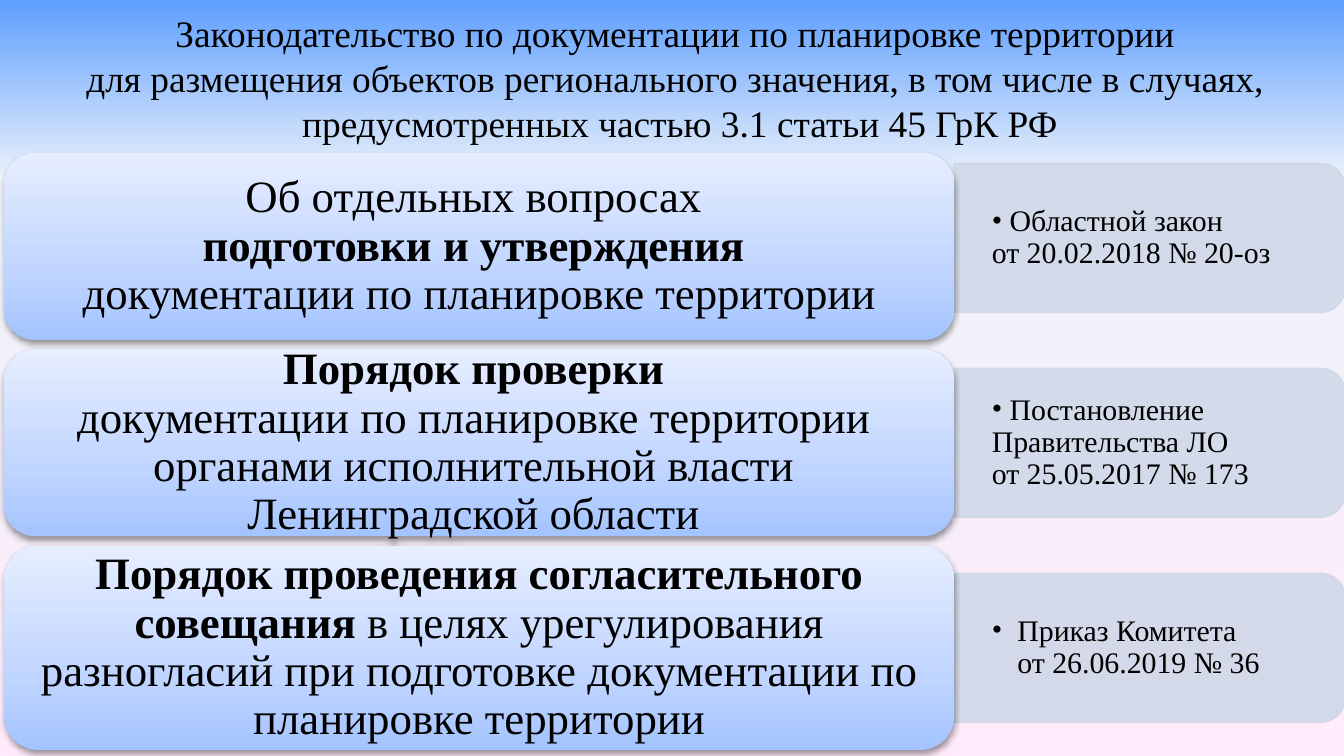
"""Build the slide on regional territory planning legislation."""
from lxml import etree
from pptx import Presentation
from pptx.dml.color import RGBColor
from pptx.enum.shapes import MSO_SHAPE as Shape
from pptx.enum.text import MSO_ANCHOR as Anchor, MSO_AUTO_SIZE as AutoSize, PP_ALIGN as Align
from pptx.oxml.ns import qn
from pptx.util import Inches, Pt

BLACK = RGBColor(0x00, 0x00, 0x00)
TAB = RGBColor(0xD0, 0xD8, 0xE8)
SKY = RGBColor(0x5E, 0x9E, 0xFF)
MIST = RGBColor(0xED, 0xF3, 0xF9)
PINK = RGBColor(0xFF, 0xEB, 0xFA)
CARD_LOW = RGBColor(0xA4, 0xC4, 0xFF)
CARD_MID = RGBColor(0xBF, 0xD4, 0xFF)
CARD_HIGH = RGBColor(0xE6, 0xEE, 0xFF)
FONT = "Times New Roman"

TITLE = (
    "Законодательство по документации по планировке территории \n"
    "для размещения объектов регионального значения, в том числе в случаях, \n"
    "предусмотренных частью 3.1 статьи 45 ГрК РФ"
)
ACTS = [
    {
        "subject": [("Об отдельных вопросах \n", False),
                    ("подготовки и утверждения \n", True),
                    ("документации по планировке территории", False)],
        "act": " Областной закон \nот 20.02.2018 № 20-оз",
        "height": 1.39, "hang": 0,
    },
    {
        "subject": [("Порядок проверки \n", True),
                    ("документации по планировке территории \n"
                     "органами исполнительной власти \nЛенинградской области ", False)],
        "act": " Постановление Правительства ЛО \nот 25.05.2017 № 173",
        "height": 1.39, "hang": 0,
    },
    {
        "subject": [("Порядок проведения согласительного совещания", True),
                    (" в целях урегулирования разногласий при подготовке "
                     "документации по планировке территории", False)],
        "act": "Приказ Комитета \nот 26.06.2019 № 36",
        "height": 1.52, "hang": 0.19,
    },
]
CARD_LEFT, CARD_TOP, CARD_WIDTH, CARD_PITCH = 0.03, 1.14, 7.07, 1.46
TAB_LEFT, TAB_WIDTH, TAB_HEIGHT = 7.1, 2.91, 1.11
FIRST_CENTER, LAST_CENTER = 1.77, 4.82
ACT_LEFT, ACT_WIDTH, ACT_HEIGHT = 7.11, 2.85, 1


def box(left, top, width, height):
    return [Inches(value) for value in (left, top, width, height)]


def set_gradient(fill, properties, stops, angle):
    fill.gradient()
    gradient = properties.find(qn("a:gradFill"))
    for child in list(gradient):
        gradient.remove(child)
    stop_list = etree.SubElement(gradient, qn("a:gsLst"))
    for position, color in stops:
        stop = etree.SubElement(stop_list, qn("a:gs"), pos=str(position * 1000))
        etree.SubElement(stop, qn("a:srgbClr"), val=str(color))
    etree.SubElement(gradient, qn("a:lin"), ang=str(angle * 60000), scaled="0")


def write(paragraph, parts, size):
    for text, bold in parts:
        for index, line in enumerate(text.split("\n")):
            if index:
                paragraph.add_line_break()
            if line:
                run = paragraph.add_run()
                run.text = line
                run.font.name, run.font.size, run.font.bold = FONT, Pt(size), bold
                run.font.color.rgb = BLACK


def add_title(slide):
    frame = slide.shapes.add_textbox(*box(0.5, 0.03, 9.12, 1.11)).text_frame
    frame.word_wrap = False
    frame.auto_size = AutoSize.SHAPE_TO_FIT_TEXT
    frame.paragraphs[0].alignment = Align.CENTER
    write(frame.paragraphs[0], [(TITLE, False)], 20)


def add_tab(slide, center_y):
    left = TAB_LEFT + (TAB_WIDTH - TAB_HEIGHT) / 2
    tab = slide.shapes.add_shape(
        Shape.ROUND_2_SAME_RECTANGLE, *box(left, center_y - TAB_WIDTH / 2, TAB_HEIGHT, TAB_WIDTH))
    tab.rotation = 90
    tab.shadow.inherit = False
    tab.fill.solid()
    tab.fill.fore_color.rgb = TAB
    tab.line.color.rgb = TAB
    tab.line.width = Pt(0.75)
    for color in tab.element.spPr.iter(qn("a:srgbClr")):
        etree.SubElement(color, qn("a:alpha"), val="90000")


def add_act(slide, center_y, text, hang):
    frame = slide.shapes.add_textbox(
        *box(ACT_LEFT, center_y - ACT_HEIGHT / 2, ACT_WIDTH, ACT_HEIGHT)).text_frame
    frame.word_wrap = True
    frame.vertical_anchor = Anchor.MIDDLE
    frame.margin_left = frame.margin_right = Inches(0.27)
    frame.margin_top = frame.margin_bottom = Inches(0.14)
    paragraph = frame.paragraphs[0]
    paragraph.level = 1
    paragraph.line_spacing = 0.9
    write(paragraph, [(text, False)], 16)
    properties = paragraph._p.get_or_add_pPr()
    properties.set("marL", str(Inches(hang)))
    properties.set("indent", str(-Inches(hang)))
    etree.SubElement(properties, qn("a:buFont"), typeface=FONT)
    etree.SubElement(properties, qn("a:buChar"), char="•")


def add_card(slide, top, height, subject):
    card = slide.shapes.add_shape(
        Shape.ROUNDED_RECTANGLE, *box(CARD_LEFT, top, CARD_WIDTH, height))
    properties = card.element.spPr
    set_gradient(card.fill, properties, [(0, CARD_LOW), (35, CARD_MID), (100, CARD_HIGH)], 270)
    card.line.fill.background()
    card.shadow.inherit = False
    shadow = etree.SubElement(
        properties.find(qn("a:effectLst")), qn("a:outerShdw"), blurRad=str(Pt(3.1)),
        dist=str(Pt(1.6)), dir="5400000", rotWithShape="0")
    color = etree.SubElement(shadow, qn("a:srgbClr"), val=str(BLACK))
    etree.SubElement(color, qn("a:alpha"), val="38000")
    frame = card.text_frame
    frame.word_wrap = True
    frame.vertical_anchor = Anchor.MIDDLE
    paragraph = frame.paragraphs[0]
    paragraph.alignment = Align.CENTER
    paragraph.line_spacing = 0.9
    write(paragraph, subject, 24)


def main():
    deck = Presentation()
    deck.slide_width = Inches(10)
    deck.slide_height = deck.slide_width * 9 // 16
    slide = deck.slides.add_slide(deck.slide_layouts[6])
    backdrop = slide.background.fill
    set_gradient(backdrop, slide.element.find(".//" + qn("p:bgPr")),
                 [(0, SKY), (24, MIST), (100, PINK)], 90)
    add_title(slide)
    center_pitch = (LAST_CENTER - FIRST_CENTER) / (len(ACTS) - 1)
    for row, act in enumerate(ACTS):
        center_y = FIRST_CENTER + row * center_pitch
        add_tab(slide, center_y)
        add_act(slide, center_y, act["act"], act["hang"])
        add_card(slide, CARD_TOP + row * CARD_PITCH, act["height"], act["subject"])
    deck.save("out.pptx")


if __name__ == "__main__":
    main()
